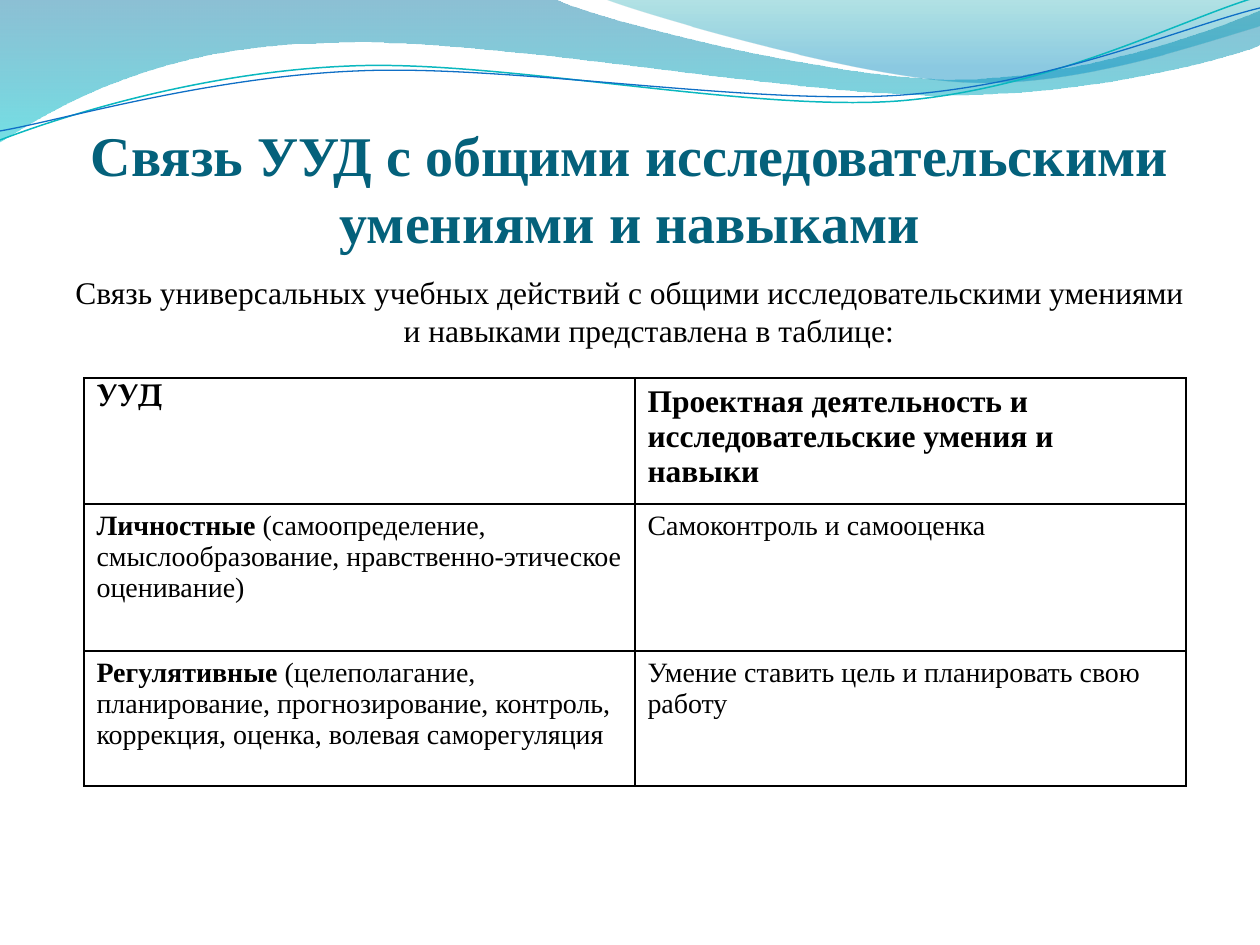
from lxml import etree
from pptx import Presentation
from pptx.dml.color import RGBColor
from pptx.enum.text import MSO_ANCHOR, PP_ALIGN
from pptx.oxml.ns import qn
from pptx.util import Pt

PX = 914400 / 126
CENTER = PP_ALIGN.CENTER
TOP, BOTTOM = MSO_ANCHOR.TOP, MSO_ANCHOR.BOTTOM
SERIF, PALLADIAN = "Times New Roman", "TeX Gyre Pagella"
COLORS = {
    "title": "04617B", "text": "000000", "border": "000000",
    "deep": "0074A1", "cyan": "00C6CF", "teal": "00A1A9", "sky": "008BBF",
    "teal line": "0AB8BF", "blue line": "0F6FC6",
}

# Each outline: a start point, then line ends (2 numbers) or Bezier curves (6)
BAND = [(0, 0), (554, -1), (600, 21, 837, 79, 955, 79), (1075, 79, 1207, 33, 1260, 11),
        (1261, 45), (1239, 55, 1096, 96, 940, 95), (784, 95, 481, 35, 324, 43),
        (163, 45, 58, 105, -1, 142), (0, 0)]
CREST = [(604, -1), (641, 14, 859, 78, 969, 82), (1079, 87, 1211, 40, 1260, 26),
         (1260, 0), (604, -1)]
TEAL_LINE = [(0, 140), (60, 117, 199, 72, 349, 66), (498, 59, 747, 112, 898, 101),
             (1050, 89, 1182, 19, 1257, -3)]
BLUE_LINE = [(0, 131), (59, 121, 207, 77, 357, 71), (508, 64, 752, 106, 903, 95),
             (1053, 84, 1186, 26, 1260, 8)]

# Each cell is a list of paragraphs; each paragraph is (bold text, plain text)
HEADER = [
    [("УУД", "")],
    [("Проектная деятельность и исследовательские умения и навыки", "")],
]
BODY_ROWS = [
    [[("Личностные ", "(самоопределение,"),
      ("", "смыслообразование, нравственно-этическое оценивание)")],
     [("", "Самоконтроль и самооценка")]],
    [[("Регулятивные ", "(целеполагание,"),
      ("", "планирование, прогнозирование, контроль,"),
      ("", "коррекция, оценка, волевая саморегуляция")],
     [("", "Умение ставить цель и планировать свою"), ("", "работу")]],
]


def px(value):
    return round(value * PX)


def color(name):
    return RGBColor.from_string(COLORS[name])


def set_font(font, size, name, tint, bold=None):
    font.size, font.name, font.bold = Pt(size), name, bold
    font.color.rgb = color(tint)


def draw_outline(page, left, top, outline, close):
    """Build the outline through its end points, then bend the curved segments."""
    ends = [(px(left + piece[-2]), px(top + piece[-1])) for piece in outline]
    builder = page.shapes.build_freeform(*ends[0], scale=1.0)
    builder.add_line_segments(ends[1:], close=close)
    shape = builder.convert_to_shape()
    shape.shadow.inherit = False
    segments = list(shape._element.iter(qn("a:lnTo")))
    for segment, piece in zip(segments, outline[1:]):
        if len(piece) == 6:
            curve = etree.Element(qn("a:cubicBezTo"))
            for x, y in zip(piece[::2], piece[1::2]):
                etree.SubElement(curve, qn("a:pt"), x=str(px(left + x) - shape.left),
                                 y=str(px(top + y) - shape.top))
            segment.getparent().replace(segment, curve)
    return shape


def add_wave(page, left, top, outline, stops):
    shape = draw_outline(page, left, top, outline, True)
    shape.line.fill.background()
    shape.fill.gradient()
    shape.fill.gradient_angle = 270
    for stop, (position, tint, _) in zip(shape.fill.gradient_stops, stops):
        stop.position = position
        stop.color.rgb = color(tint)
    tints = shape._element.spPr.iter(qn("a:srgbClr"))
    for element, (_, _, opacity) in zip(tints, stops):
        etree.SubElement(element, qn("a:alpha"), val=str(opacity * 1000))


def add_header_waves(page, left, top):
    add_wave(page, left, top, BAND, [(0, "deep", 45), (1, "cyan", 55)])
    add_wave(page, left, top, CREST, [(0, "teal", 30), (0.8, "sky", 45)])
    for outline, tint, width in ((TEAL_LINE, "teal line", 0.85), (BLUE_LINE, "blue line", 0.75)):
        shape = draw_outline(page, left, top, outline, False)
        shape.fill.background()
        shape.line.color.rgb = color(tint)
        shape.line.width = Pt(width)


def add_text(page, left, top, width, height, text, anchor):
    box = page.shapes.add_textbox(px(left), px(top), px(width), px(height))
    frame = box.text_frame
    frame.word_wrap = True
    frame.vertical_anchor = anchor
    para = frame.paragraphs[0]
    para.text = text
    para.alignment = CENTER
    return frame, para


def add_title(page, left, top, width, height):
    frame, para = add_text(page, left, top, width, height,
                           "Связь УУД с общими исследовательскими умениями и навыками", BOTTOM)
    frame.margin_left = frame.margin_right = frame.margin_bottom = 0
    set_font(para.font, 32, SERIF, "title", True)


def add_intro(page, left, top, width, height):
    _, para = add_text(page, left, top, width, height,
                       "Связь универсальных учебных действий с общими исследовательскими "
                       "умениями и навыками представлена в таблице:", TOP)
    set_font(para.font, 18, SERIF, "text")
    # Hanging indent
    properties = para._p.get_or_add_pPr()
    properties.set("marL", str(px(38)))
    properties.set("indent", str(px(-38)))


def add_borders(cell):
    properties = cell._tc.get_or_add_tcPr()
    for index, side in enumerate(("a:lnL", "a:lnR", "a:lnT", "a:lnB")):
        line = etree.Element(qn(side), w=str(Pt(1)))
        fill = etree.SubElement(line, qn("a:solidFill"))
        etree.SubElement(fill, qn("a:srgbClr"), val=COLORS["border"])
        properties.insert(index, line)


def fill_cell(cell, paragraphs, size, name):
    cell.fill.background()
    add_borders(cell)
    frame = cell.text_frame
    for index, (strong, plain) in enumerate(paragraphs):
        para = frame.add_paragraph() if index else frame.paragraphs[0]
        set_font(para.font, size, name, "text")
        for text, bold in ((strong, True), (plain, False)):
            if text:
                span = para.add_run()
                span.text = text
                span.font.bold = bold


def add_skills_table(page, left, top, width, row_heights):
    rows = [HEADER] + BODY_ROWS
    frame = page.shapes.add_table(len(rows), 2, px(left), px(top), px(width), px(sum(row_heights)))
    table = frame.table
    table.first_row = table.horz_banding = False
    for column in table.columns:
        column.width = px(width / 2)
    for row_index, (row, height) in enumerate(zip(rows, row_heights)):
        table.rows[row_index].height = px(height)
        for column_index, paragraphs in enumerate(row):
            size = 16 if row_index else 18
            name = SERIF if row_index or column_index else PALLADIAN
            fill_cell(table.cell(row_index, column_index), paragraphs, size, name)


def main():
    deck = Presentation()
    deck.slide_width, deck.slide_height = px(1260), px(945)
    page = deck.slides.add_slide(deck.slide_layouts[6])
    add_header_waves(page, 0, 0)
    add_title(page, 63, 97, 1134, 158)
    add_intro(page, 63, 267, 1134, 605)
    add_skills_table(page, 84, 378, 1102, (126, 147, 135))
    deck.save("out.pptx")


if __name__ == "__main__":
    main()
